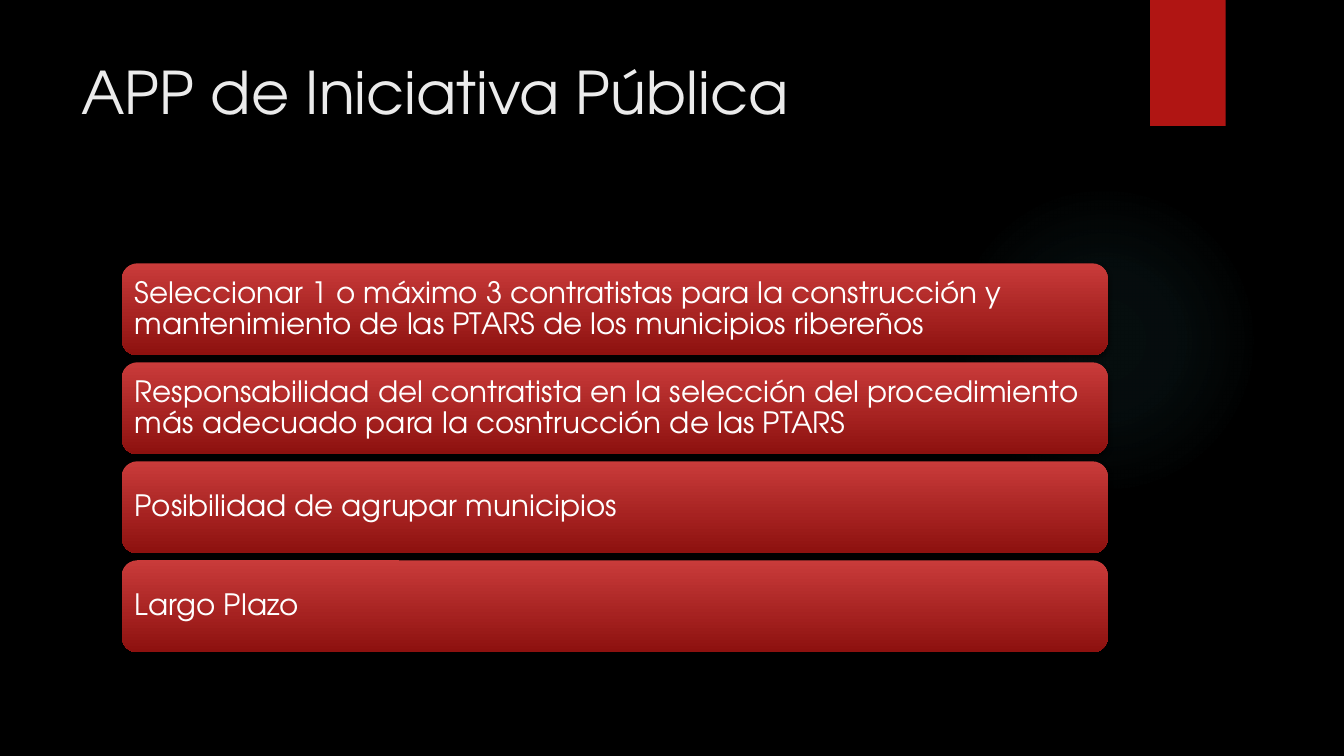
from dataclasses import dataclass

from lxml.etree import SubElement
from pptx import Presentation
from pptx.dml.color import RGBColor
from pptx.enum.shapes import MSO_SHAPE
from pptx.enum.text import MSO_ANCHOR, PP_ALIGN
from pptx.oxml.ns import qn
from pptx.util import Pt


@dataclass(frozen=True)
class Theme:
    """Colours, font and type sizes of the slide."""
    background: str = "000000"
    glow: str = "50B9C1"
    accent: str = "B01513"
    bar_top: str = "C93B3A"
    bar_bottom: str = "8D110F"
    shadow: str = "000000"
    title: str = "EBEBEB"
    text: str = "FFFFFF"
    font: str = "TeX Gyre Adventor"
    title_size: float = 42
    text_size: float = 21


THEME = Theme()
FEATURES = (
    "Seleccionar 1 o máximo 3 contratistas para la construcción y "
    "mantenimiento de las PTARS de los municipios ribereños",
    "Responsabilidad del contratista en la selección del procedimiento "
    "más adecuado para la cosntrucción de las PTARS",
    "Posibilidad de agrupar municipios",
    "Largo Plazo",
)
BAR_LEFT, BAR_TOP, BAR_WIDTH, BAR_HEIGHT = 87.1, 188.1, 704.2, 65.8
BAR_PITCH = 70.7


def apply_format(target, values):
    """Set each named attribute on the target."""
    for name, value in values.items():
        setattr(target, name, value)


def add_colour(parent, colour, opacity):
    """Append a colour with an opacity in percent."""
    element = SubElement(parent, qn("a:srgbClr"), val=colour)
    SubElement(element, qn("a:alpha"), val=str(opacity * 1000))


def add_block(slide, preset, left, top, width, height):
    """Add an outline-free preset shape without a shadow."""
    block = slide.shapes.add_shape(preset, Pt(left), Pt(top), Pt(width), Pt(height))
    block.line.fill.background()
    block.shadow.inherit = False
    return block


def add_shadow(block):
    """Give the block a soft shadow that falls downwards."""
    effects = block._element.spPr.find(qn("a:effectLst"))
    shadow = SubElement(effects, qn("a:outerShdw"), blurRad=str(Pt(3)),
                        dist=str(Pt(2)), dir="5400000", rotWithShape="0")
    add_colour(shadow, THEME.shadow, 45)


def add_glow(slide):
    """Add the faint round glow that fades to its rim."""
    glow = add_block(slide, MSO_SHAPE.OVAL, 677.5, 131.8, 221.8, 221.8)
    glow.fill.gradient()
    gradient = glow._element.spPr.find(qn("a:gradFill"))
    for child in list(gradient):
        gradient.remove(child)
    stops = SubElement(gradient, qn("a:gsLst"))
    for position, opacity in ((0, 7), (36, 6), (69, 0)):
        stop = SubElement(stops, qn("a:gs"), pos=str(position * 1000))
        add_colour(stop, THEME.glow, opacity)
    circle = SubElement(gradient, qn("a:path"), path="circle")
    SubElement(circle, qn("a:fillToRect"), l="50000", t="50000", r="50000", b="50000")


def add_ribbon(slide):
    """Add the accent ribbon at the top edge."""
    ribbon = add_block(slide, MSO_SHAPE.RECTANGLE, 821.5, 0, 54, 90)
    ribbon.fill.solid()
    ribbon.fill.fore_color.rgb = RGBColor.from_string(THEME.accent)
    add_shadow(ribbon)


def write_text(frame, text, size, colour):
    """Write one left-aligned paragraph into the frame."""
    frame.word_wrap = True
    para = frame.paragraphs[0]
    para.alignment = PP_ALIGN.LEFT
    span = para.add_run()
    span.text = text
    apply_format(span.font, {"name": THEME.font, "size": Pt(size)})
    span.font.color.rgb = RGBColor.from_string(colour)
    return para


def place_title(slide, text):
    """Move the title placeholder and write its text."""
    title = slide.shapes.title
    apply_format(title, {"left": Pt(51), "top": Pt(36),
                         "width": Pt(741), "height": Pt(110)})
    title.text_frame.vertical_anchor = MSO_ANCHOR.TOP
    write_text(title.text_frame, text, THEME.title_size, THEME.title)


def add_bar(slide, top, text):
    """Add one rounded gradient bar with its text."""
    bar = add_block(slide, MSO_SHAPE.ROUNDED_RECTANGLE,
                    BAR_LEFT, top, BAR_WIDTH, BAR_HEIGHT)
    bar.fill.gradient()
    bar.fill.gradient_angle = 270
    for stop, colour in zip(bar.fill.gradient_stops, (THEME.bar_top, THEME.bar_bottom)):
        stop.color.rgb = RGBColor.from_string(colour)
    add_shadow(bar)
    apply_format(bar.text_frame, {
        "margin_left": Pt(6), "margin_right": Pt(6),
        "margin_top": Pt(6), "margin_bottom": Pt(6),
        "vertical_anchor": MSO_ANCHOR.MIDDLE})
    para = write_text(bar.text_frame, text, THEME.text_size, THEME.text)
    para.line_spacing = 0.9


def main():
    """Build the slide and save the deck."""
    deck = Presentation()
    apply_format(deck, {"slide_width": Pt(960), "slide_height": Pt(540)})
    slide = deck.slides.add_slide(deck.slide_layouts[5])
    slide.background.fill.solid()
    slide.background.fill.fore_color.rgb = RGBColor.from_string(THEME.background)
    add_glow(slide)
    add_ribbon(slide)
    place_title(slide, "APP de Iniciativa Pública")
    for index, feature in enumerate(FEATURES):
        add_bar(slide, BAR_TOP + index * BAR_PITCH, feature)
    deck.save("out.pptx")


if __name__ == "__main__":
    main()
